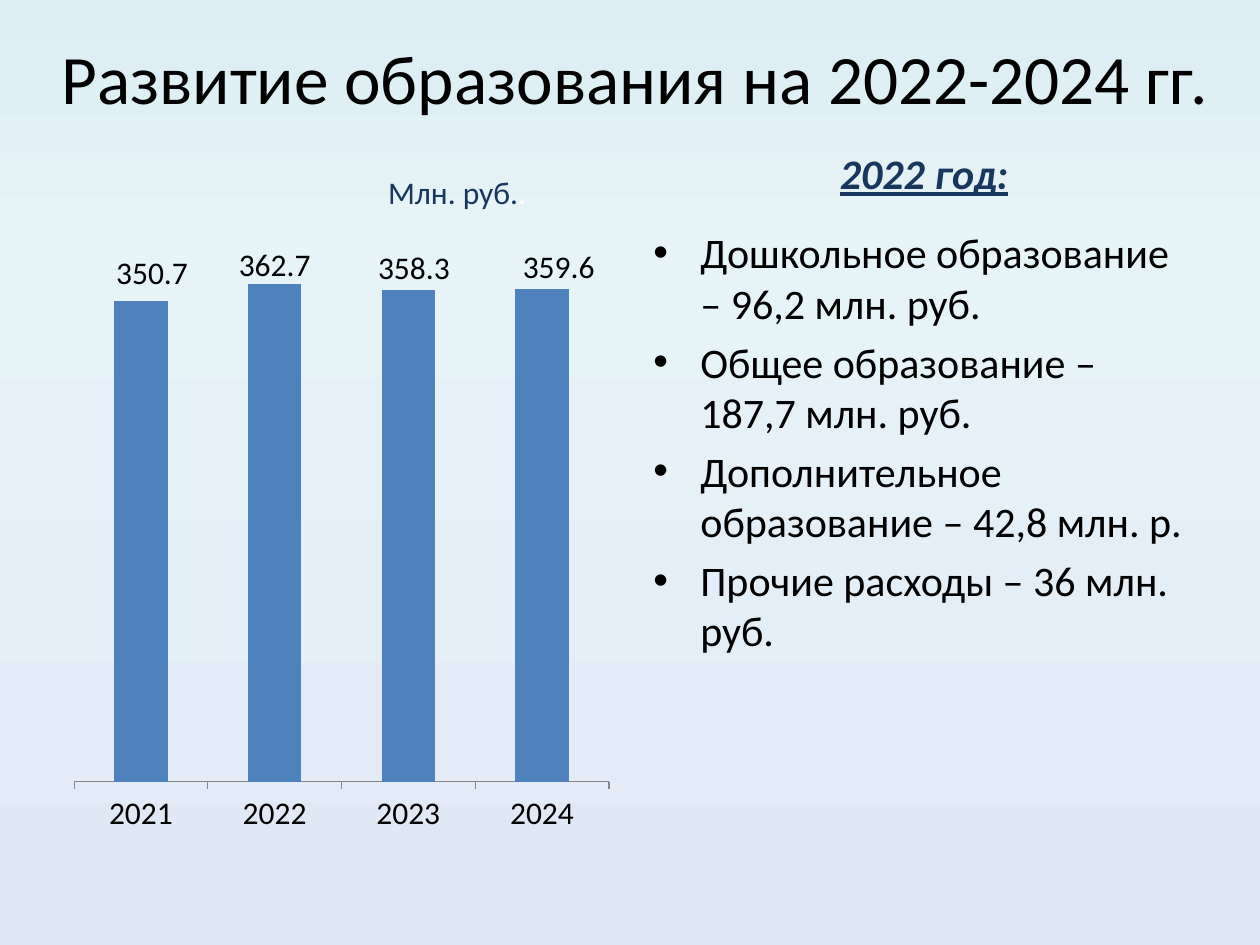
from dataclasses import dataclass

from lxml.etree import SubElement
from pptx import Presentation
from pptx.chart.data import CategoryChartData
from pptx.dml.color import RGBColor
from pptx.enum.chart import XL_CHART_TYPE as ChartType, XL_TICK_LABEL_POSITION as LabelPos, XL_TICK_MARK as Tick
from pptx.enum.text import MSO_ANCHOR as Anchor, PP_ALIGN as Align
from pptx.oxml import parse_xml
from pptx.oxml.ns import nsdecls, qn
from pptx.util import Cm, Pt


@dataclass(frozen=True)
class Theme:
    font: str = "Calibri"
    text: str = "000000"
    accent: str = "17375E"
    pale: str = "FFFFFF"
    bar: str = "4F81BD"
    axis: str = "868686"
    gradient: tuple = ((0, "DBEEF4"), (25, "E6F3F7"), (100, "E1E8F5"))
    title_size: float = 39.6
    body_size: int = 24
    chart_size: int = 18


THEME = Theme()
TITLE = "Развитие образования на 2022-2024 гг."
YEAR = "2022 год:"
UNIT = [("Млн. руб.", THEME.accent), (".", THEME.pale)]
SPENDING = [
    "Дошкольное образование – 96,2 млн. руб.",
    "Общее образование – 187,7 млн. руб.",
    "Дополнительное образование – 42,8 млн. р.",
    "Прочие расходы – 36 млн. руб.",
]
BUDGET = {"2021": 350.7, "2022": 362.7, "2023": 358.3, "2024": 359.6}
LABEL_OFFSETS = [(0.02, -0.43), (0, -0.43), (0.01, -0.43), (0.03, -0.43)]
PLOT_AREA = (0.02, 0.02, 0.96, 0.88)

TITLE_BOX = (0.64, 0.76, 24.33, 1.57)
CHART_BOX = (1.27, 4.45, 11.23, 12.57)
SPENDING_BOX = (12.92, 4.45, 11.23, 12.57)
YEAR_BOX = (16.51, 2.75, 4.24, 1.47)
UNIT_BOX = (7.41, 3.5, 3.61, 0.74)


def add_text(slide, box, paragraphs, *, size, color=THEME.text, emphasis=False,
             align=Align.CENTER, anchor=Anchor.MIDDLE, bullet=None):
    """Add a text box; a paragraph is a string or a list of (text, colour) runs."""
    frame = slide.shapes.add_textbox(*map(Cm, box)).text_frame
    frame.word_wrap = True
    frame.vertical_anchor = anchor
    for index, content in enumerate(paragraphs):
        paragraph = frame.add_paragraph() if index else frame.paragraphs[0]
        paragraph.alignment = align
        if bullet:
            paragraph.space_before = Pt(size * 0.2)
            properties = paragraph._p.get_or_add_pPr()
            properties.set("marL", str(Cm(0.95)))
            properties.set("indent", str(-Cm(0.95)))
            SubElement(properties, qn("a:buFont"), typeface="Arial")
            SubElement(properties, qn("a:buChar"), char=bullet)
        runs = [(content, color)] if isinstance(content, str) else content
        for text, run_color in runs:
            run = paragraph.add_run()
            run.text = text
            font = run.font
            font.name, font.size = THEME.font, Pt(size)
            font.color.rgb = RGBColor.from_string(run_color)
            if emphasis:
                font.bold = font.italic = font.underline = True


def paint_background(slide):
    """Fill the slide with the vertical theme gradient."""
    fill = slide.background.fill
    fill.gradient()
    fill.gradient_angle = 270
    stops = slide._element.find(".//" + qn("a:gsLst"))
    for stop in list(stops):
        stops.remove(stop)
    for position, color in THEME.gradient:
        stop = SubElement(stops, qn("a:gs"), pos=str(position * 1000))
        SubElement(stop, qn("a:srgbClr"), val=color)


def manual_layout(**values):
    """Return a chart layout element with the given settings."""
    settings = "".join(f'<c:{key} val="{value}"/>' for key, value in values.items())
    return parse_xml(f'<c:layout {nsdecls("c")}><c:manualLayout>{settings}</c:manualLayout></c:layout>')


def add_budget_chart(slide):
    """Add the column chart of yearly spending."""
    data = CategoryChartData()
    data.categories = list(BUDGET)
    data.add_series("Series 1", list(BUDGET.values()))
    chart = slide.shapes.add_chart(ChartType.COLUMN_STACKED, *map(Cm, CHART_BOX), data).chart
    chart.has_legend = chart.has_title = False
    chart.font.name, chart.font.size = THEME.font, Pt(THEME.chart_size)
    chart.font.color.rgb = RGBColor.from_string(THEME.text)

    years, amounts = chart.category_axis, chart.value_axis
    years.major_tick_mark = Tick.OUTSIDE
    years.tick_label_position = LabelPos.NEXT_TO_AXIS
    years.format.line.color.rgb = RGBColor.from_string(THEME.axis)
    amounts.minimum_scale, amounts.maximum_scale = 0, 400
    amounts.has_major_gridlines = amounts.visible = False

    plot = chart.plots[0]
    plot.gap_width, plot.overlap, plot.vary_by_categories = 150, 100, False
    series = plot.series[0]
    series.format.fill.solid()
    series.format.fill.fore_color.rgb = RGBColor.from_string(THEME.bar)
    series.data_labels.show_value = True
    for index, (x, y) in enumerate(LABEL_OFFSETS):
        label = series.points[index].data_label._get_or_add_dLbl()
        label.insert(1, manual_layout(x=x, y=y))

    plot_area = chart._chartSpace.find(".//" + qn("c:plotArea"))
    for leader_lines in plot_area.iter(qn("c:showLeaderLines")):
        leader_lines.set("val", "0")
    for layout in plot_area.findall(qn("c:layout")):
        plot_area.remove(layout)
    x, y, w, h = PLOT_AREA
    plot_area.insert(0, manual_layout(layoutTarget="inner", xMode="edge", yMode="edge", x=x, y=y, w=w, h=h))


def main():
    """Build and save the slide."""
    deck = Presentation()
    deck.slide_width, deck.slide_height = Cm(25.4), Cm(19.05)
    slide = deck.slides.add_slide(deck.slide_layouts[6])
    paint_background(slide)
    add_text(slide, TITLE_BOX, [TITLE], size=THEME.title_size)
    add_budget_chart(slide)
    add_text(slide, SPENDING_BOX, SPENDING, size=THEME.body_size,
             align=Align.LEFT, anchor=Anchor.TOP, bullet="•")
    add_text(slide, YEAR_BOX, [YEAR], size=THEME.body_size, color=THEME.accent, emphasis=True)
    add_text(slide, UNIT_BOX, [UNIT], size=THEME.chart_size)
    deck.save("out.pptx")


if __name__ == "__main__":
    main()
